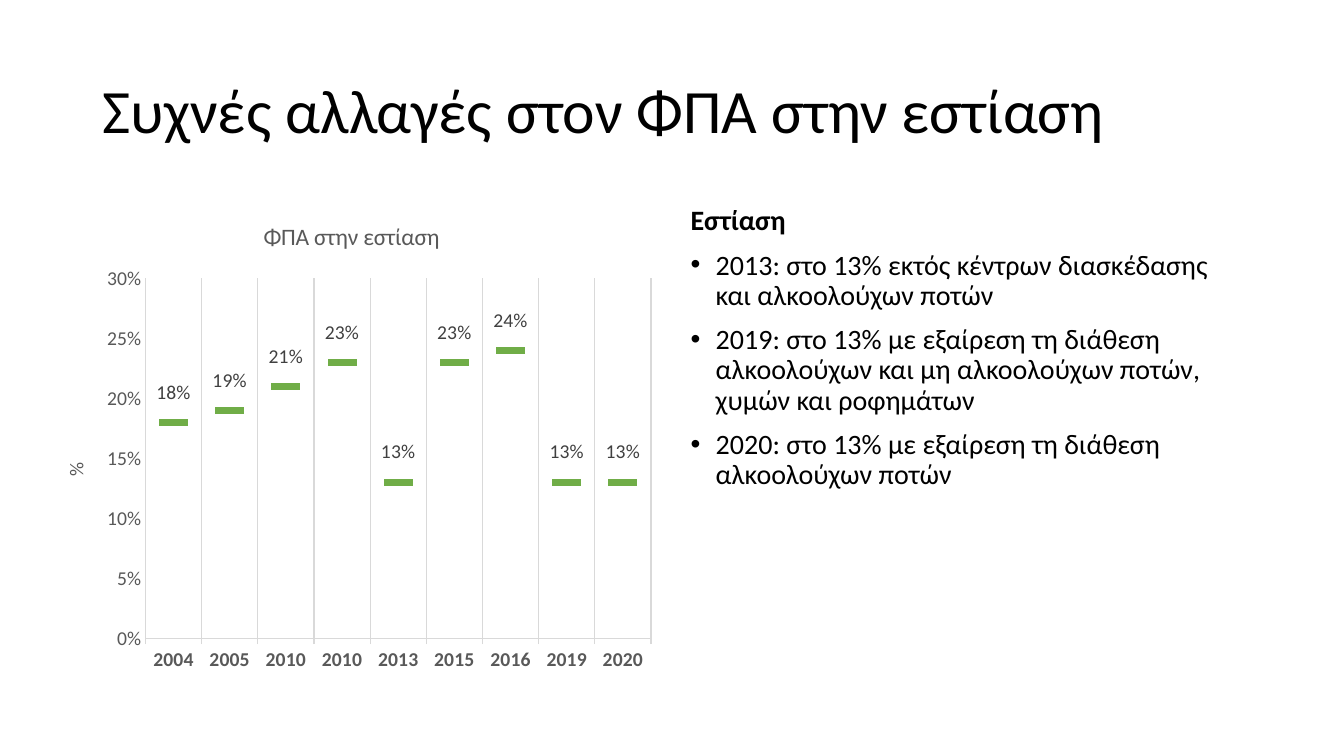
from dataclasses import dataclass

from lxml.etree import SubElement
from pptx import Presentation
from pptx.chart.axis import CategoryAxis, ValueAxis
from pptx.chart.chart import Chart
from pptx.chart.data import CategoryChartData
from pptx.chart.series import LineSeries
from pptx.dml.color import RGBColor
from pptx.dml.line import LineFormat
from pptx.enum.chart import (XL_CHART_TYPE, XL_LABEL_POSITION,
                             XL_MARKER_STYLE, XL_TICK_MARK)
from pptx.enum.text import MSO_ANCHOR, MSO_AUTO_SIZE, PP_ALIGN
from pptx.oxml import parse_xml
from pptx.oxml.ns import nsdecls, qn
from pptx.shapes.base import BaseShape
from pptx.slide import Slide
from pptx.text.text import Font, _Paragraph
from pptx.util import Inches, Pt

SLIDE_WIDTH, SLIDE_HEIGHT = Inches(13.33), Inches(7.5)
BLACK, GREY, DARK_GREY, PALE, GREEN = "000000", "595959", "404040", "D9D9D9", "70AD47"


@dataclass(frozen=True)
class Area:
    """Hold a region as percentages of the slide's size."""
    left: float
    top: float
    width: float
    height: float

    def box(self) -> tuple[int, int, int, int]:
        """Return left, top, width and height in EMU."""
        return (int(SLIDE_WIDTH * self.left / 100), int(SLIDE_HEIGHT * self.top / 100),
                int(SLIDE_WIDTH * self.width / 100), int(SLIDE_HEIGHT * self.height / 100))


@dataclass(frozen=True)
class Rate:
    """Hold the VAT rate set in a year."""
    year: str
    share: float


@dataclass(frozen=True)
class Point:
    """Hold one paragraph of the explanation."""
    text: str
    heading: bool = False


TITLE_AREA = Area(6.88, 5.33, 86.25, 19.33)
NOTES_AREA = Area(50.63, 26.67, 42.5, 63.47)
CHART_AREA = Area(2.93, 26.67, 46.44, 63.47)

RATES = [Rate("2004", 0.18), Rate("2005", 0.19), Rate("2010", 0.21),
         Rate("2010", 0.23), Rate("2013", 0.13), Rate("2015", 0.23),
         Rate("2016", 0.24), Rate("2019", 0.13), Rate("2020", 0.13)]

POINTS = [
    Point("Εστίαση", heading=True),
    Point("2013: στο 13% εκτός κέντρων διασκέδασης και αλκοολούχων ποτών"),
    Point("2019: στο 13% με εξαίρεση τη διάθεση αλκοολούχων και μη αλκοολούχων "
          "ποτών, χυμών και ροφημάτων"),
    Point("2020: στο 13% με εξαίρεση τη διάθεση αλκοολούχων ποτών"),
]


def rgb(code: str) -> RGBColor:
    """Turn a hex string into a colour."""
    return RGBColor.from_string(code)


def style_font(font: Font, size: float, color: str, bold: bool = False) -> None:
    """Set typeface, size, colour and weight."""
    font.name, font.size, font.bold = "Calibri", Pt(size), bold
    font.color.rgb = rgb(color)


def write(paragraph: _Paragraph, text: str, *, size: float, color: str = BLACK,
          bold: bool = False, spacing: float | None = None, before: float = 0) -> None:
    """Fill a paragraph with one formatted run."""
    run = paragraph.add_run()
    run.text = text
    style_font(run.font, size, color, bold)
    if spacing:
        paragraph.alignment = PP_ALIGN.LEFT
        paragraph.line_spacing = spacing
        paragraph.space_before = Pt(before)


def set_bullet(paragraph: _Paragraph, bulleted: bool) -> None:
    """Give a paragraph a hanging bullet or none."""
    indent = Inches(0.25) if bulleted else 0
    properties = paragraph._p.get_or_add_pPr()
    properties.set("marL", str(indent))
    properties.set("indent", str(-indent))
    if bulleted:
        SubElement(properties, qn("a:buFont"), typeface="Arial")
        SubElement(properties, qn("a:buChar"), char="•")
    else:
        SubElement(properties, qn("a:buNone"))


def place(placeholder: BaseShape, area: Area, anchor: MSO_ANCHOR) -> None:
    """Move a text placeholder to its area."""
    placeholder.left, placeholder.top, placeholder.width, placeholder.height = area.box()
    frame = placeholder.text_frame
    frame.word_wrap, frame.auto_size, frame.vertical_anchor = True, MSO_AUTO_SIZE.NONE, anchor


def style_line(line: LineFormat) -> None:
    """Draw a thin pale line."""
    line.color.rgb = rgb(PALE)
    line.width = Pt(0.75)


def style_years(axis: CategoryAxis) -> None:
    """Format the axis of years."""
    style_font(axis.tick_labels.font, 14, GREY, bold=True)
    axis.major_tick_mark, axis.minor_tick_mark = XL_TICK_MARK.OUTSIDE, XL_TICK_MARK.NONE
    axis.has_major_gridlines = True
    style_line(axis.major_gridlines.format.line)
    style_line(axis.format.line)


def style_percentages(axis: ValueAxis) -> None:
    """Format the axis of rates."""
    style_font(axis.tick_labels.font, 14, GREY)
    axis.tick_labels.number_format = "0%"
    axis.tick_labels.number_format_is_linked = False
    axis.minimum_scale, axis.maximum_scale, axis.major_unit = 0, 0.3, 0.05
    axis.major_tick_mark = axis.minor_tick_mark = XL_TICK_MARK.NONE
    axis.has_major_gridlines = False
    axis.format.line.fill.background()
    caption = axis.axis_title.text_frame
    write(caption.paragraphs[0], "%", size=14, color=GREY)
    caption._txBody.find(qn("a:bodyPr")).set("rot", "-5400000")


def style_rates(series: LineSeries) -> None:
    """Show the rates as labelled dashes without a line."""
    series.smooth = False
    series.format.line.fill.background()
    marker = series.marker
    marker.style, marker.size = XL_MARKER_STYLE.DASH, 20
    marker.format.fill.solid()
    marker.format.fill.fore_color.rgb = rgb(GREEN)
    marker.format.line.fill.background()
    labels = series.data_labels
    labels.show_value, labels.position = True, XL_LABEL_POSITION.ABOVE
    labels.number_format, labels.number_format_is_linked = "0%", False
    style_font(labels.font, 14, DARK_GREY)


def set_plot_area(chart: Chart, **shares: float) -> None:
    """Fix the inner plot area as shares of the chart's size."""
    plot_area = chart._chartSpace.chart.plotArea
    for layout in plot_area.findall(qn("c:layout")):
        plot_area.remove(layout)
    sizes = "".join(f'<c:{side} val="{share}"/>' for side, share in shares.items())
    plot_area.insert(0, parse_xml(
        f'<c:layout {nsdecls("c")}><c:manualLayout><c:layoutTarget val="inner"/>'
        f'<c:xMode val="edge"/><c:yMode val="edge"/>{sizes}</c:manualLayout></c:layout>'))


def add_rate_chart(slide: Slide) -> None:
    """Add the chart of VAT rates."""
    data = CategoryChartData(number_format="0%")
    data.categories = [rate.year for rate in RATES]
    data.add_series("Series 1", [rate.share for rate in RATES])
    chart = slide.shapes.add_chart(XL_CHART_TYPE.LINE_MARKERS, *CHART_AREA.box(), data).chart
    style_font(chart.font, 14, BLACK)
    chart.has_legend = False
    write(chart.chart_title.text_frame.paragraphs[0], "ΦΠΑ στην εστίαση", size=16.8, color=GREY)
    chart.chart_title.include_in_layout = False
    chart.plots[0].vary_by_categories = False
    style_years(chart.category_axis)
    style_percentages(chart.value_axis)
    style_rates(chart.plots[0].series[0])
    set_plot_area(chart, x=0.17, y=0.16, w=0.81, h=0.75)


def main() -> None:
    """Build and save the slide."""
    deck = Presentation()
    deck.slide_width, deck.slide_height = SLIDE_WIDTH, SLIDE_HEIGHT
    slide = deck.slides.add_slide(deck.slide_layouts[1])
    title, notes = slide.shapes.title, slide.placeholders[1]
    place(title, TITLE_AREA, MSO_ANCHOR.MIDDLE)
    write(title.text_frame.paragraphs[0], "Συχνές αλλαγές στον ΦΠΑ στην εστίαση",
          size=44, spacing=0.9)
    place(notes, NOTES_AREA, MSO_ANCHOR.TOP)
    for index, point in enumerate(POINTS):
        frame = notes.text_frame
        paragraph = frame.add_paragraph() if index else frame.paragraphs[0]
        write(paragraph, point.text, size=20, bold=point.heading, spacing=0.9, before=10)
        set_bullet(paragraph, not point.heading)
    add_rate_chart(slide)
    deck.save("out.pptx")


if __name__ == "__main__":
    main()
